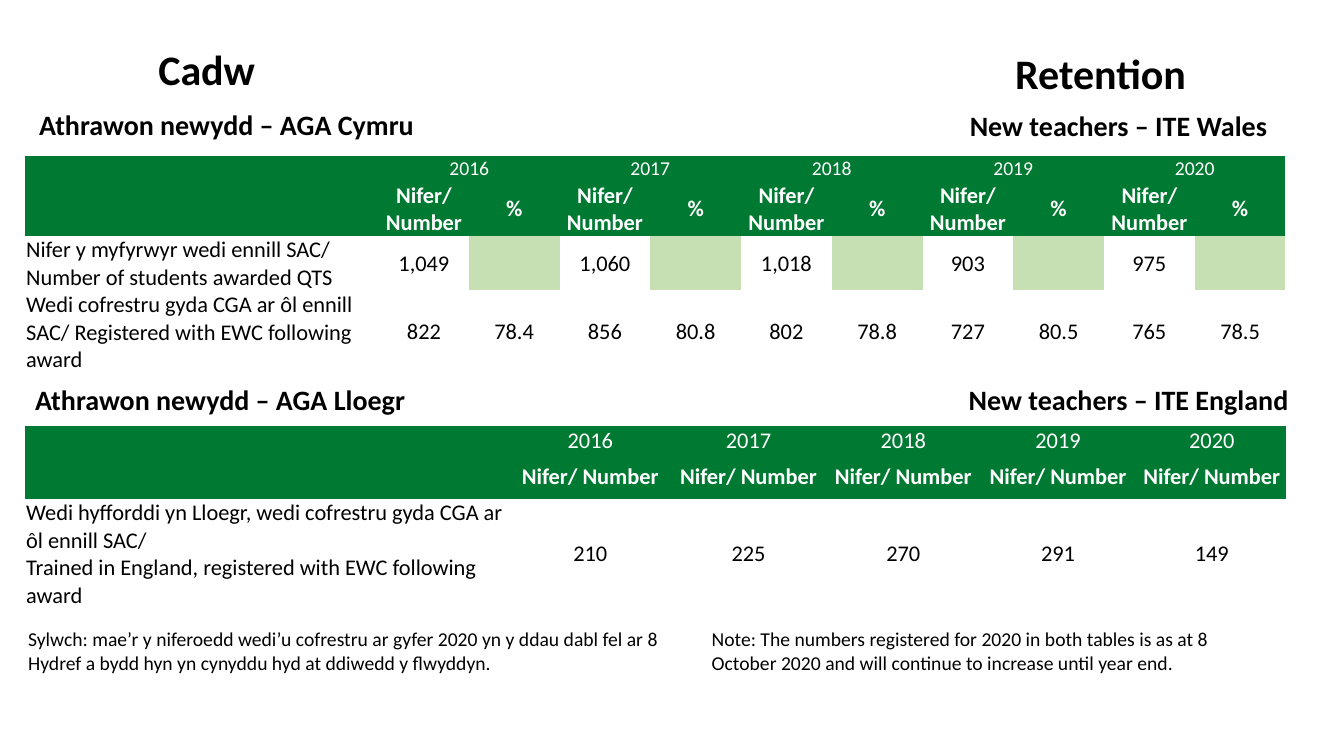
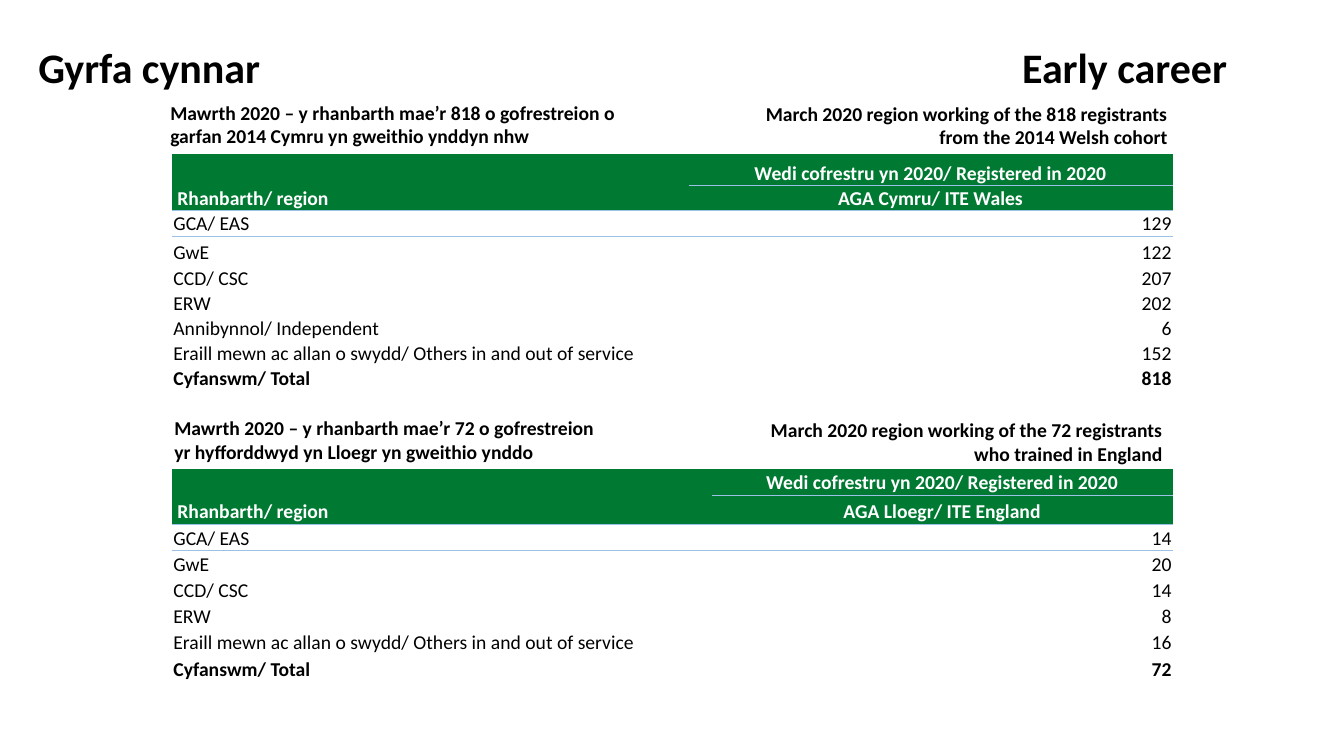
from lxml import etree
from pptx import Presentation
from pptx.dml.color import RGBColor
from pptx.enum import text
from pptx.oxml.ns import qn
from pptx.util import Inches, Pt

COLORS = {"green": "007A33", "pale": "C6E0B4", "rule": "9BC2E6",
          "white": "FFFFFF", "black": "000000"}
NO_STYLE = "{2D5ABB26-0587-4C30-8999-92F81FD0307C}"
LEFT, CENTER, RIGHT = text.PP_ALIGN.LEFT, text.PP_ALIGN.CENTER, text.PP_ALIGN.RIGHT
MIDDLE, BOTTOM = text.MSO_ANCHOR.MIDDLE, text.MSO_ANCHOR.BOTTOM
FRAME = {"word_wrap": True, "vertical_anchor": text.MSO_ANCHOR.TOP,
         "auto_size": text.MSO_AUTO_SIZE.SHAPE_TO_FIT_TEXT}
CELL = {"margin_left": Inches(0.01), "margin_right": Inches(0.01),
        "margin_top": Inches(0.01), "margin_bottom": 0}
TITLE = {"size": Pt(30), "bold": True}
HEADING = {"size": Pt(20), "bold": True}
SUBHEADING = {"size": Pt(14), "bold": True}
NOTE = {"size": Pt(14), "bold": False}


def write(tf, content, font, align=LEFT, color="black"):
    for i, line in enumerate(content.split("\n")):
        p = tf.add_paragraph() if i else tf.paragraphs[0]
        p.alignment = align
        r = p.add_run()
        r.text = line
        for key, value in {"name": "Calibri", **font}.items():
            setattr(r.font, key, value)
        r.font.color.rgb = RGBColor.from_string(COLORS[color])


def add_table(s, at, cols, heights, data, merges, sizes, bold_rows, anchor, body_align):
    """Two green header rows above plain rows; None marks a shaded blank."""
    tb = s.shapes.add_table(len(heights), len(cols), *map(Inches, at)).table
    tb.first_row = tb.horz_banding = False
    tb._tbl.tblPr.find(qn("a:tableStyleId")).text = NO_STYLE
    for col, width in zip(tb.columns, cols):
        col.width = Inches(width)
    for row, height in zip(tb.rows, heights):
        row.height = Inches(height)
    for r1, c1, r2, c2 in merges:
        tb.cell(r1, c1).merge(tb.cell(r2, c2))
    for i, values in enumerate(data):
        header = i < 2
        for j, value in enumerate(values):
            cell = tb.cell(i, j)
            for key, setting in {**CELL, "vertical_anchor": anchor}.items():
                setattr(cell, key, setting)
            fill = "green" if header else "pale" if value is None else None
            if fill:
                cell.fill.solid()
                cell.fill.fore_color.rgb = RGBColor.from_string(COLORS[fill])
            else:
                cell.fill.background()
            align = LEFT if j == 0 else CENTER if header else body_align
            font = {"size": Pt(sizes[i]), "bold": i in bold_rows}
            write(cell.text_frame, value or "", font, align, "white" if header else "black")
    return tb


prs = Presentation()
prs.slide_width, prs.slide_height = Inches(13.33), Inches(7.5)

# Titles, headings and notes: the first item of each slide is its title
pages = [
    [
        ("Cadw", (1.47, 0.38, 2.05, 0.61), TITLE, LEFT),
        ("Retention", (9.97, 0.42, 2.05, 0.61), TITLE, LEFT),
        ("Athrawon newydd – AGA Cymru", (0.29, 1.02, 5.02, 0.44), HEADING, LEFT),
        ("New teachers – ITE Wales", (9.52, 1.03, 3.19, 0.44), HEADING, LEFT),
        ("Athrawon newydd – AGA Lloegr", (0.25, 3.75, 5.02, 0.44), HEADING, LEFT),
        ("New teachers – ITE England", (9.51, 3.75, 3.7, 0.44), HEADING, LEFT),
        ("Sylwch: mae’r y niferoedd wedi’u cofrestru ar gyfer 2020 yn y ddau dabl fel ar 8 "
         "Hydref a bydd hyn yn cynyddu hyd at ddiwedd y flwyddyn.",
         (0.18, 6.17, 6.68, 0.57), NOTE, LEFT),
        ("Note: The numbers registered for 2020 in both tables is as at 8 October 2020 "
         "and will continue to increase until year end.",
         (6.96, 6.17, 5.75, 0.57), NOTE, LEFT),
    ],
    [
        ("Gyrfa cynnar", (0.28, 0.36, 3.24, 0.61), TITLE, LEFT),
        ("Early career", (9.03, 0.36, 3.24, 0.61), TITLE, RIGHT),
        ("Mawrth 2020 – y rhanbarth mae’r 818 o gofrestreion o garfan 2014 Cymru "
         "yn gweithio ynddyn nhw", (1.59, 0.95, 4.65, 0.57), SUBHEADING, LEFT),
        ("March 2020 region working of the 818 registrants from the 2014 Welsh cohort",
         (7.18, 0.96, 4.5, 0.57), SUBHEADING, RIGHT),
        ("Mawrth 2020 – y rhanbarth mae’r 72 o gofrestreion yr hyfforddwyd yn Lloegr "
         "yn gweithio ynddo", (1.63, 4.08, 4.41, 0.57), SUBHEADING, LEFT),
        ("March 2020 region working of the 72 registrants who trained in England",
         (7.22, 4.1, 4.41, 0.57), SUBHEADING, RIGHT),
    ],
]
for items in pages:
    s = prs.slides.add_slide(prs.slide_layouts[5])
    for i, (content, at, font, align) in enumerate(items):
        box = [Inches(v) for v in at]
        sp = s.shapes.add_textbox(*box) if i else s.shapes.title
        sp.left, sp.top, sp.width, sp.height = box
        for key, value in FRAME.items():
            setattr(sp.text_frame, key, value)
        write(sp.text_frame, content, font, align)
retention, career = prs.slides

# Retention: teachers trained in Wales
years = ["2016", "2017", "2018", "2019", "2020"]
awarded = ["1,049", "1,060", "1,018", "903", "975"]
registered = ["822", "78.4", "856", "80.8", "802", "78.8", "727", "80.5", "765", "78.5"]
wales = [
    [""] + [v for year in years for v in (year, "")],
    [""] + ["Nifer/ Number", "%"] * len(years),
    ["Nifer y myfyrwyr wedi ennill SAC/ Number of students awarded QTS"]
    + [v for number in awarded for v in (number, None)],
    ["Wedi cofrestru gyda CGA ar ôl ennill SAC/ Registered with EWC following award"]
    + registered,
]
year_merges = [(0, c, 0, c + 1) for c in range(1, 11, 2)]
add_table(retention, (0.25, 1.55, 12.47, 2.13), [3.51, 0.89] + [0.9] * 9,
          [0.24, 0.54, 0.54, 0.81], wales, [(0, 0, 1, 0)] + year_merges,
          [14, 16, 16, 16], {1}, MIDDLE, CENTER)

# Retention: teachers trained in England
england = [
    [""] + years,
    [""] + ["Nifer/ Number"] * len(years),
    ["Wedi hyfforddi yn Lloegr, wedi cofrestru gyda CGA ar ôl ennill SAC/\n"
     "Trained in England, registered with EWC following award",
     "210", "225", "270", "291", "149"],
]
add_table(retention, (0.25, 4.23, 12.52, 1.79), [4.82, 1.57, 1.57, 1.5, 1.57, 1.48],
          [0.27, 0.44, 1.08], england, [(0, 0, 1, 0)], [16] * 3, {1}, MIDDLE, CENTER)

# Early career: registrants by region
others = "Eraill mewn ac allan o swydd/ Others in and out of service"
regions = ["GCA/ EAS", "GwE", "CCD/ CSC", "ERW"]
total = "Cyfanswm/ Total"
region_tables = [
    ((1.71, 1.53, 9.92, 2.36), [5.12, 4.8],
     [0.31, 0.25, 0.25, 0.29, 0.25, 0.25, 0.25, 0.25, 0.25], "AGA Cymru/ ITE Wales",
     regions + ["Annibynnol/ Independent", others, total],
     ["129", "122", "207", "202", "6", "152", "818"]),
    ((1.71, 4.65, 9.92, 2.13), [5.35, 4.57], [0.26, 0.29] + [0.26] * 6,
     "AGA Lloegr/ ITE England", regions + [others, total],
     ["14", "20", "14", "8", "16", "72"]),
]
for at, cols, heights, cohort, names, counts in region_tables:
    data = [["Rhanbarth/ region", "Wedi cofrestru yn 2020/ Registered in 2020"],
            ["", cohort], *zip(names, counts)]
    tb = add_table(career, at, cols, heights, data, [(0, 0, 1, 0)], [14] * len(data),
                   {0, 1, len(data) - 1}, BOTTOM, RIGHT)
    tb.cell(0, 0).margin_left = Inches(0.05)
    # Thin rules under the header rows
    for row, col, side in [(0, 0, "lnB"), (0, 1, "lnB"), (1, 0, "lnB"), (1, 1, "lnB"),
                           (1, 1, "lnT"), (2, 0, "lnT"), (2, 1, "lnT")]:
        ln = etree.Element(qn("a:" + side), w=str(Pt(0.5)))
        fill = etree.SubElement(ln, qn("a:solidFill"))
        etree.SubElement(fill, qn("a:srgbClr"), val=COLORS["rule"])
        tb.cell(row, col)._tc.get_or_add_tcPr().insert(0, ln)

prs.save("out.pptx")
